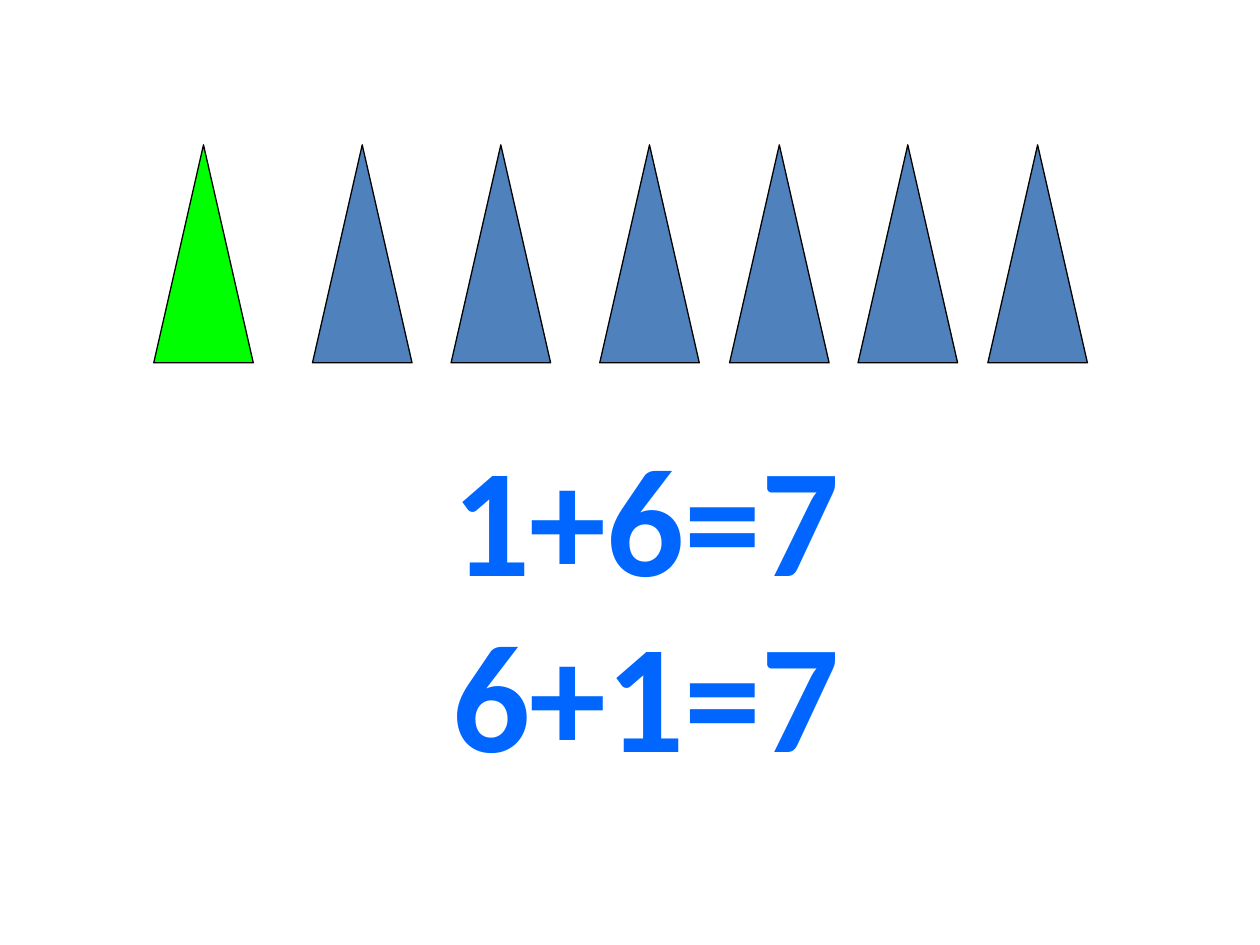
from pptx import Presentation
from pptx.dml.color import RGBColor
from pptx.enum.shapes import MSO_SHAPE
from pptx.enum.text import PP_ALIGN
from pptx.util import Inches, Pt

GREEN, BLUE, BLACK, SUM_BLUE = "00FF00", "4F81BD", "000000", "0066FF"
TREE_LEFTS = [1.22, 2.48, 3.58, 4.76, 5.79, 6.81, 7.84]
SUMS = ["1+6=7", "6+1=7"]


def color(hex_value):
    """Turn a hex string into a colour."""
    return RGBColor.from_string(hex_value)


def add_tree(slide, left, fill):
    """Draw one outlined counting triangle."""
    tree = slide.shapes.add_shape(
        MSO_SHAPE.ISOSCELES_TRIANGLE,
        Inches(left), Inches(1.15), Inches(0.79), Inches(1.73))
    tree.shadow.inherit = False
    tree.fill.solid()
    tree.fill.fore_color.rgb = color(fill)
    tree.line.color.rgb = color(BLACK)
    tree.line.width = Pt(0.75)


def add_sums(slide, sums):
    """Write the sums as large centred lines."""
    frame = slide.shapes.add_textbox(
        Inches(0.75), Inches(3.59), Inches(8.75), Inches(2.82)).text_frame
    frame.word_wrap = True
    for index, equation in enumerate(sums):
        line = frame.add_paragraph() if index else frame.paragraphs[0]
        line.alignment = PP_ALIGN.CENTER
        line.line_spacing = 0.8
        if index:
            line.space_before = Pt(16)
        run = line.add_run()
        run.text = equation
        run.font.name = "Calibri"
        run.font.size = Pt(88)
        run.font.bold = True
        run.font.color.rgb = color(SUM_BLUE)


def main():
    """Build and save the addition slide."""
    deck = Presentation()
    deck.slide_width, deck.slide_height = Inches(10), Inches(7.5)
    slide = deck.slides.add_slide(deck.slide_layouts[6])
    add_sums(slide, SUMS)
    for index, left in enumerate(TREE_LEFTS):
        add_tree(slide, left, BLUE if index else GREEN)
    deck.save("out.pptx")


if __name__ == "__main__":
    main()
